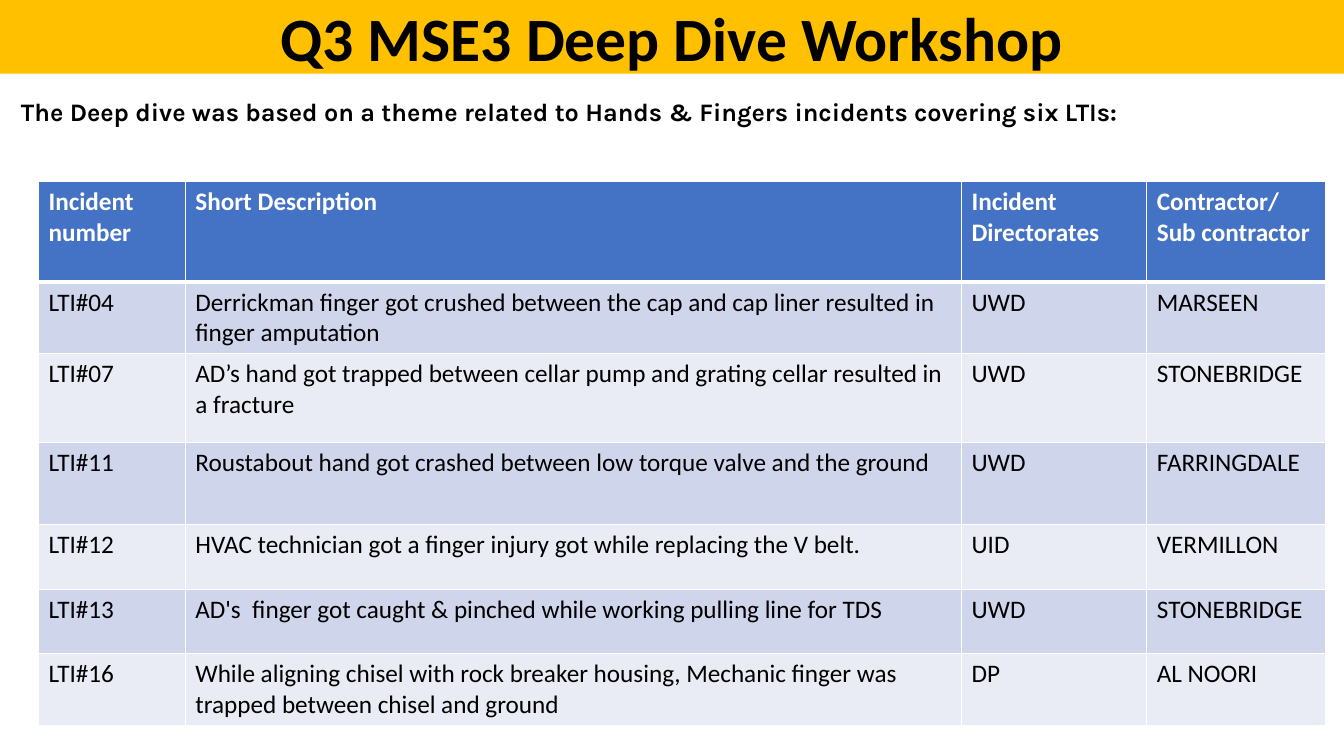
"""Build the Q3 deep dive workshop slide with its table of six incidents."""
from lxml import etree
from pptx import Presentation
from pptx.dml.color import RGBColor
from pptx.enum.shapes import MSO_SHAPE
from pptx.enum.text import MSO_ANCHOR, PP_ALIGN
from pptx.oxml.ns import qn
from pptx.util import Cm, Pt

RECTANGLE = MSO_SHAPE.RECTANGLE
BOTTOM = MSO_ANCHOR.BOTTOM
CENTER = PP_ALIGN.CENTER

AMBER, BLUE, BLACK, WHITE = "FFC000", "4472C4", "000000", "FFFFFF"
BANDS = ["E9EBF5", "CFD5EA"]
COLUMN_WIDTHS = [3.7, 19.56, 4.67, 4.5]
ROW_HEIGHTS = [2.54, 1.78, 2.24, 2.06, 1.63, 1.63, 1.78]
INCIDENTS = [
    ("Incident number", "Short Description", "Incident Directorates", "Contractor/Sub contractor"),
    ("LTI#04", "Derrickman finger got crushed between the cap and cap liner resulted in finger amputation", "UWD", "MARSEEN"),
    ("LTI#07", "AD’s hand got trapped between cellar pump and grating cellar resulted in a fracture", "UWD", "STONEBRIDGE"),
    ("LTI#11", "Roustabout hand got crashed between low torque valve and the ground", "UWD", "FARRINGDALE"),
    ("LTI#12", "HVAC technician got a finger injury got while replacing the V belt.", "UID", "VERMILLON"),
    ("LTI#13", "AD's  finger got caught & pinched while working pulling line for TDS", "UWD", "STONEBRIDGE"),
    ("LTI#16", "While aligning chisel with rock breaker housing, Mechanic finger was trapped between chisel and ground", "DP", "AL NOORI"),
]


def color(value):
    return RGBColor.from_string(value)


def write(para, text, size, font, ink, bold):
    span = para.add_run()
    span.text = text
    span.font.size = Pt(size)
    span.font.name = font
    span.font.bold = bold
    span.font.color.rgb = color(ink)


deck = Presentation()
deck.slide_width, deck.slide_height = Cm(33.87), Cm(19.05)
page = deck.slides.add_slide(deck.slide_layouts[6])

banner = page.shapes.add_shape(RECTANGLE, 0, Cm(-0.02), deck.slide_width, Cm(1.88))
banner.shadow.inherit = False
banner.fill.solid()
banner.fill.fore_color.rgb = color(AMBER)
banner.line.fill.background()
banner.text_frame.vertical_anchor = BOTTOM
banner.text_frame.margin_top = banner.text_frame.margin_bottom = 0
title = banner.text_frame.paragraphs[0]
title.alignment = CENTER
write(title, "Q3 MSE3 Deep Dive Workshop", 44, "Calibri", BLACK, True)

table = page.shapes.add_table(
    len(ROW_HEIGHTS), len(COLUMN_WIDTHS), Cm(0.97), Cm(4.57),
    Cm(sum(COLUMN_WIDTHS)), Cm(sum(ROW_HEIGHTS))).table
for column, width in zip(table.columns, COLUMN_WIDTHS):
    column.width = Cm(width)

for index, (height, incident) in enumerate(zip(ROW_HEIGHTS, INCIDENTS)):
    table.rows[index].height = Cm(height)
    header = index == 0
    edges = {"a:lnL": 1, "a:lnR": 1, "a:lnT": 3 if index == 1 else 1, "a:lnB": 3 if header else 1}
    for cell, text in zip(table.rows[index].cells, incident):
        properties = cell._tc.get_or_add_tcPr()
        for edge, weight in edges.items():
            line = etree.SubElement(properties, qn(edge), w=str(Pt(weight)))
            paint = etree.SubElement(line, qn("a:solidFill"))
            etree.SubElement(paint, qn("a:srgbClr"), val=WHITE)
        cell.fill.solid()
        cell.fill.fore_color.rgb = color(BLUE if header else BANDS[index % 2])
        write(cell.text_frame.paragraphs[0], text, 18, "Calibri", WHITE if header else BLACK, header)

intro = page.shapes.add_textbox(Cm(0.28), Cm(2.31), Cm(31.93), Cm(1.03))
intro.text_frame.word_wrap = True
write(intro.text_frame.paragraphs[0],
      "The Deep dive was based on a theme related to Hands & Fingers incidents covering six LTIs:",
      18, "Karla", BLACK, True)

deck.save("out.pptx")
